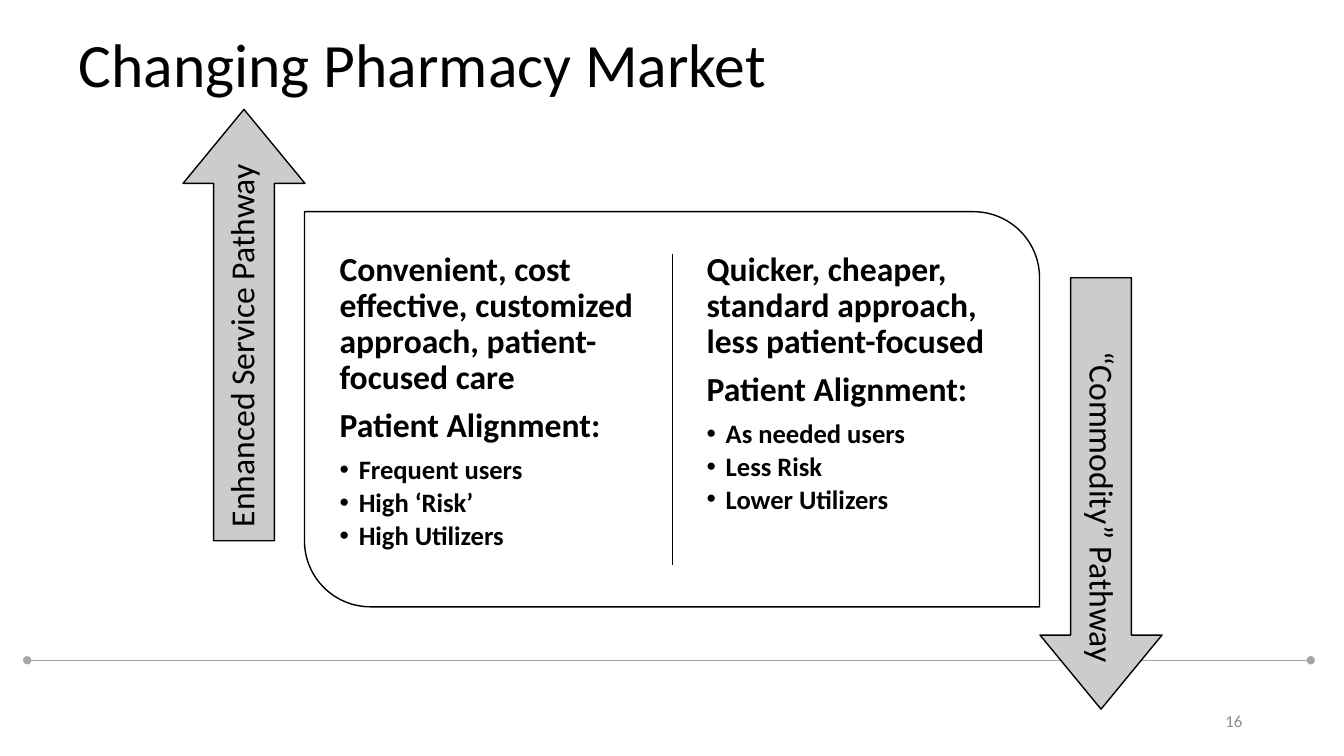
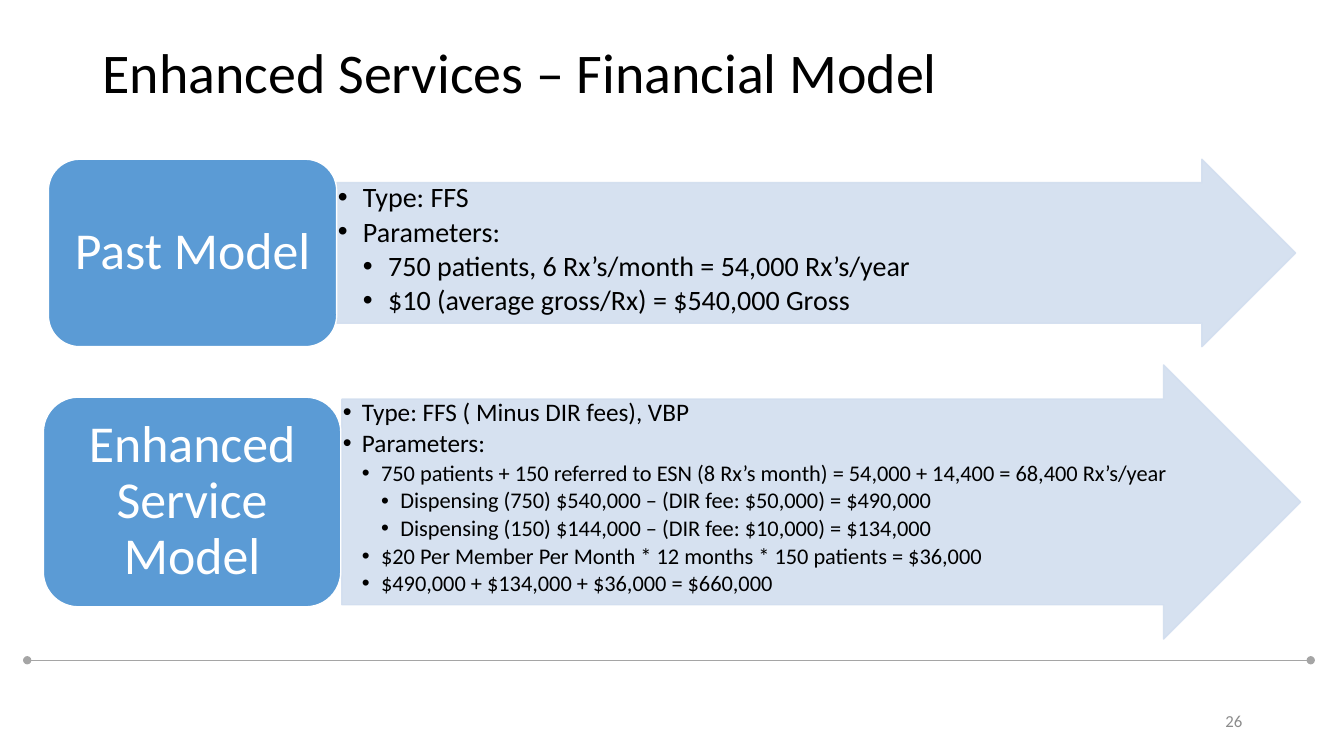
"""Builds two slides on the pharmacy market and the enhanced services financial model."""
import pptx
import pptx.dml.color
import pptx.enum.shapes
import pptx.enum.text
import pptx.oxml.ns
import pptx.util
from lxml import etree

Inches = pptx.util.Inches
Pt = pptx.util.Pt
RGBColor = pptx.dml.color.RGBColor
SHAPE = pptx.enum.shapes.MSO_SHAPE
ALIGN = pptx.enum.text.PP_ALIGN
ANCHOR = pptx.enum.text.MSO_ANCHOR
STRAIGHT = pptx.enum.shapes.MSO_CONNECTOR.STRAIGHT
qn = pptx.oxml.ns.qn

BLACK = RGBColor(0x00, 0x00, 0x00)
WHITE = RGBColor(0xFF, 0xFF, 0xFF)
RULE_GRAY = RGBColor(0xA5, 0xA5, 0xA5)
NUMBER_GRAY = RGBColor(0x8C, 0x8C, 0x8C)
ARROW_GRAY = RGBColor(0xCC, 0xCC, 0xCC)
PALE_BLUE = RGBColor(0xD2, 0xDE, 0xEF)
BLUE = RGBColor(0x5B, 0x9B, 0xD5)
FONT = "Calibri"


def add_shape(slide, preset, box, fill, line, adjustments=(), alpha=None):
    shape = slide.shapes.add_shape(preset, *map(Inches, box))
    shape.shadow.inherit = False
    shape.fill.solid()
    shape.fill.fore_color.rgb = fill
    shape.line.color.rgb = line
    shape.line.width = Pt(1)
    for index, value in enumerate(adjustments):
        shape.adjustments[index] = value
    if alpha:
        for color in shape.element.spPr.iter(qn("a:srgbClr")):
            etree.SubElement(color, qn("a:alpha"), val=str(alpha * 1000))
    return shape


def write(shape, paragraphs, insets=(0.1, 0.05), color=BLACK, bold=False,
          align=ALIGN.LEFT, anchor=ANCHOR.TOP, step=0.19, spacing=0.9):
    frame = shape.text_frame
    frame.word_wrap = True
    frame.vertical_anchor = anchor
    frame.margin_left = frame.margin_right = Inches(insets[0])
    frame.margin_top = frame.margin_bottom = Inches(insets[1])
    for index, (text, size, level) in enumerate(paragraphs):
        paragraph = frame.add_paragraph() if index else frame.paragraphs[0]
        paragraph.alignment = align
        paragraph.line_spacing = spacing
        paragraph.space_after = Pt(size * (0.15 if level else 0.35))
        if level:
            paragraph.level = level
            properties = paragraph._p.get_or_add_pPr()
            properties.set("marL", str(Inches(step * level)))
            properties.set("indent", str(-Inches(step)))
            etree.SubElement(properties, qn("a:buFont"), typeface="Arial")
            etree.SubElement(properties, qn("a:buChar"), char="•")
        run = paragraph.add_run()
        run.text = text
        run.font.name = FONT
        run.font.size = Pt(size)
        run.font.bold = bold
        run.font.color.rgb = color


presentation = pptx.Presentation()
presentation.slide_width = Inches(13.33)
presentation.slide_height = Inches(7.5)

slides = []
for title, title_size, left, top, number in [
    ("Changing Pharmacy Market", 44, 0.68, 0.29, "16"),
    ("Enhanced Services – Financial Model", 40, 0.92, 0.4, "26"),
]:
    slide = presentation.slides.add_slide(presentation.slide_layouts[6])
    rule = slide.shapes.add_connector(STRAIGHT, Inches(0.27), Inches(6.55), Inches(13), Inches(6.55))
    rule.line.color.rgb = RULE_GRAY
    rule.line.width = Pt(0.5)
    for end in ("a:headEnd", "a:tailEnd"):
        etree.SubElement(rule.line._get_or_add_ln(), qn(end), type="oval")
    etree.SubElement(rule.element.spPr, qn("a:effectLst"))
    title_box = slide.shapes.add_textbox(Inches(left), Inches(top), Inches(11.5), Inches(1.45))
    write(title_box, [(title, title_size, 0)])
    number_box = slide.shapes.add_textbox(Inches(9.42), Inches(6.95), Inches(3), Inches(0.4))
    write(number_box, [(number, 12, 0)], color=NUMBER_GRAY, align=ALIGN.RIGHT,
          anchor=ANCHOR.MIDDLE, spacing=1.0)
    slides.append(slide)
market_slide, model_slide = slides

add_shape(market_slide, SHAPE.ROUND_2_DIAG_RECTANGLE, (3.02, 2.1, 7.29, 3.92), WHITE, BLACK, (0, 0.167))
divider = market_slide.shapes.add_connector(STRAIGHT, Inches(6.67), Inches(2.52), Inches(6.67), Inches(5.61))
divider.line.color.rgb = BLACK
divider.line.width = Pt(1)
etree.SubElement(divider.element.spPr, qn("a:effectLst"))

for left, approach, users in [
    (3.27, "Convenient, cost effective, customized approach, patient-focused care",
     ["Frequent users", "High ‘Risk’", "High Utilizers"]),
    (6.91, "Quicker, cheaper, standard approach, less patient-focused",
     ["As needed users", "Less Risk", "Lower Utilizers"]),
]:
    column = market_slide.shapes.add_textbox(Inches(left), Inches(2.4), Inches(3.16), Inches(3.33))
    headings = [(approach, 24, 0), ("Patient Alignment:", 24, 0)]
    write(column, headings + [(user, 19, 1) for user in users], insets=(0.1, 0.1), bold=True)

for rotation, arrow_left, arrow_top, label_left, label_top, label in [
    (270, 0.28, 2.62, 0.46, 3.11, "Enhanced Service Pathway "),
    (90, 8.78, 4.29, 8.96, 4.41, "“Commodity” Pathway"),
]:
    arrow = add_shape(market_slide, SHAPE.RIGHT_ARROW, (arrow_left, arrow_top, 4.28, 1.21),
                      ARROW_GRAY, BLACK, (0.498, 0.607))
    label_box = market_slide.shapes.add_textbox(
        Inches(label_left), Inches(label_top), Inches(3.91), Inches(0.61))
    arrow.rotation = label_box.rotation = rotation
    write(label_box, [(label, 24, 0)], insets=(0.1, 0.1), align=ALIGN.RIGHT, anchor=ANCHOR.MIDDLE)

past_details = [
    ("Type: FFS", 20, 1),
    ("Parameters:", 20, 1),
    ("750 patients, 6 Rx’s/month = 54,000 Rx’s/year", 20, 2),
    ("$10 (average gross/Rx) = $540,000 Gross", 20, 2),
]
enhanced_details = [
    ("Type: FFS ( Minus DIR fees), VBP", 18, 1),
    ("Parameters:", 18, 1),
    ("750 patients + 150 referred to ESN (8 Rx’s month) = 54,000 + 14,400 = 68,400 Rx’s/year", 16, 2),
    ("Dispensing (750) $540,000 – (DIR fee: $50,000) = $490,000", 16, 3),
    ("Dispensing (150) $144,000 – (DIR fee: $10,000) = $134,000", 16, 3),
    ("$20 Per Member Per Month * 12 months * 150 patients = $36,000", 16, 2),
    ("$490,000 + $134,000 + $36,000 = $660,000", 16, 2),
]
for name, name_box, arrow_box, details_box, details, step in [
    ("Past Model", (0.48, 1.58, 2.86, 1.86), (3.34, 1.58, 9.51, 1.86),
     (3.34, 1.81, 8.81, 1.39), past_details, 0.25),
    ("Enhanced Service Model", (0.43, 3.94, 2.95, 2.08), (3.39, 3.62, 9.51, 2.72),
     (3.39, 3.96, 8.49, 2.04), enhanced_details, 0.19),
]:
    add_shape(model_slide, SHAPE.RIGHT_ARROW, arrow_box, PALE_BLUE, PALE_BLUE, (0.75, 0.5), alpha=90)
    details_shape = model_slide.shapes.add_textbox(*map(Inches, details_box))
    write(details_shape, details, insets=(0.01, 0.01), step=step)
    name_shape = add_shape(model_slide, SHAPE.ROUNDED_RECTANGLE, name_box, BLUE, WHITE)
    write(name_shape, [(name, 37, 0)], insets=(0.15, 0.08), color=WHITE,
          align=ALIGN.CENTER, anchor=ANCHOR.MIDDLE)

presentation.save("out.pptx")
